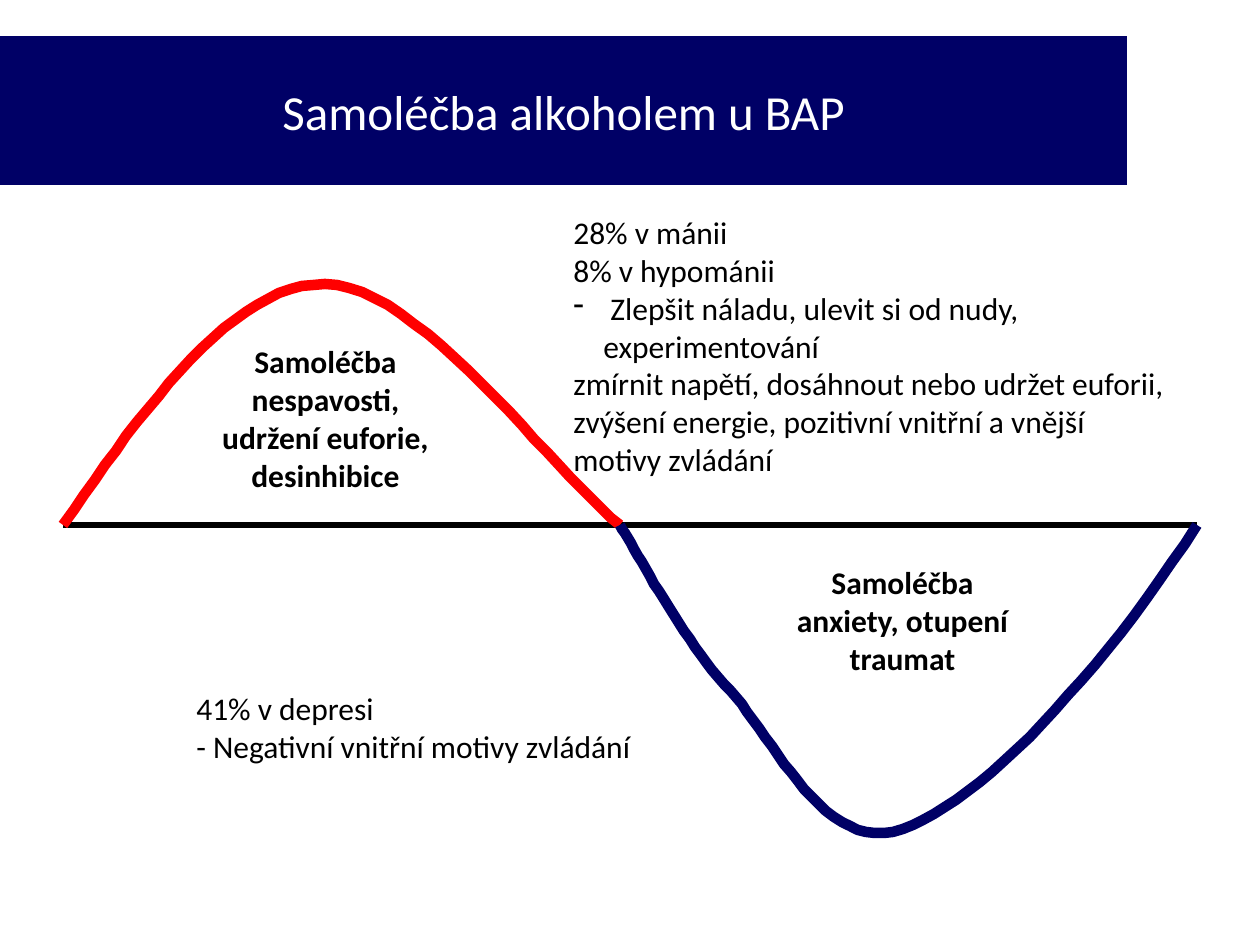
from lxml.etree import SubElement
from pptx import Presentation
from pptx.dml.color import RGBColor
from pptx.enum.shapes import MSO_CONNECTOR
from pptx.enum.text import MSO_ANCHOR, PP_ALIGN
from pptx.oxml.ns import qn
from pptx.util import Emu, Pt

BLACK = RGBColor(0x00, 0x00, 0x00)
WHITE = RGBColor(0xFF, 0xFF, 0xFF)
RED = RGBColor(0xFF, 0x00, 0x00)
NAVY = RGBColor(0x00, 0x00, 0x66)
PX = 914400 / 126
STEPS = 24


def px(*nums):
    return [Emu(round(n * PX)) for n in nums]


def write(shape, *lines, size=18, bold=False, color=BLACK, align=PP_ALIGN.LEFT,
          anchor=MSO_ANCHOR.TOP, before=0):
    """Fill the shape with one paragraph a line; a leading tab makes a dash bullet."""
    frame = shape.text_frame
    frame.word_wrap = True
    frame.vertical_anchor = anchor
    for i, line in enumerate(lines):
        par = frame.add_paragraph() if i else frame.paragraphs[0]
        par.alignment = align
        par.space_before = Pt(before)
        run = par.add_run()
        run.text = line.lstrip("\t")
        run.font.name = "Calibri"
        run.font.size = Pt(size)
        run.font.bold = bold
        run.font.color.rgb = color
        if line.startswith("\t"):
            props = par._p.get_or_add_pPr()
            indent = px(30)[0]
            props.set("marL", str(indent))
            props.set("indent", str(-indent))
            SubElement(props, qn("a:buChar"), char="-")


deck = Presentation()
deck.slide_width, deck.slide_height = px(1260, 945)
slide = deck.slides.add_slide(deck.slide_layouts[5])
shapes = slide.shapes

# Axis
axis = shapes.add_connector(MSO_CONNECTOR.STRAIGHT, *px(63, 525, 1197, 525))
axis.line.color.rgb = BLACK
axis.line.width = Pt(3)
SubElement(axis._element.spPr, qn("a:effectLst"))

# Labels inside the waves
for box, text in [
    ((189, 336, 273, 164), "Samoléčba nespavosti, udržení euforie, desinhibice"),
    ((766, 557, 273, 126), "Samoléčba anxiety, otupení traumat"),
]:
    write(shapes.add_textbox(*px(*box)), text, bold=True,
          align=PP_ALIGN.CENTER, before=9)

# Waves: each is a chain of cubic curves that share their end points
mania = [(63, 525), (147, 404), (233, 284), (325, 284),
         (418, 284), (553, 471), (620, 525)]
gloom = [(620, 525), (638, 553), (682, 640), (730, 690), (776, 741),
         (825, 857), (903, 829), (981, 801), (1099, 677), (1197, 525)]
for knots, color in [(mania, RED), (gloom, NAVY)]:
    dots = []
    for k in range(0, len(knots) - 1, 3):
        for t in (s / STEPS for s in range(1, STEPS + 1)):
            mix = ((1 - t) ** 3, 3 * t * (1 - t) ** 2, 3 * t * t * (1 - t), t ** 3)
            dots.append([sum(m * v for m, v in zip(mix, axis_vals))
                         for axis_vals in zip(*knots[k:k + 4])])
    pen = shapes.build_freeform(*knots[0], scale=PX)
    pen.add_line_segments(dots, close=False)
    wave = pen.convert_to_shape()
    wave.shadow.inherit = False
    wave.fill.background()
    wave.line.color.rgb = color
    wave.line.width = Pt(6)

# Title band
title = shapes.title
title.left, title.top, title.width, title.height = px(0, 36, 1127, 149)
title.fill.solid()
title.fill.fore_color.rgb = NAVY
write(title, "Samoléčba alkoholem u BAP", size=28, color=WHITE,
      align=PP_ALIGN.CENTER, anchor=MSO_ANCHOR.MIDDLE)

# Motives
write(shapes.add_textbox(*px(561, 207, 680, 242)),
      "28% v mánii",
      "8% v hypománii",
      "\t Zlepšit náladu, ulevit si od nudy, experimentování",
      "zmírnit napětí, dosáhnout nebo udržet euforii,",
      "zvýšení energie, pozitivní vnitřní a vnější",
      "motivy zvládání")
write(shapes.add_textbox(*px(184, 683, 465, 89)),
      "41% v depresi",
      "- Negativní vnitřní motivy zvládání")

deck.save("out.pptx")
